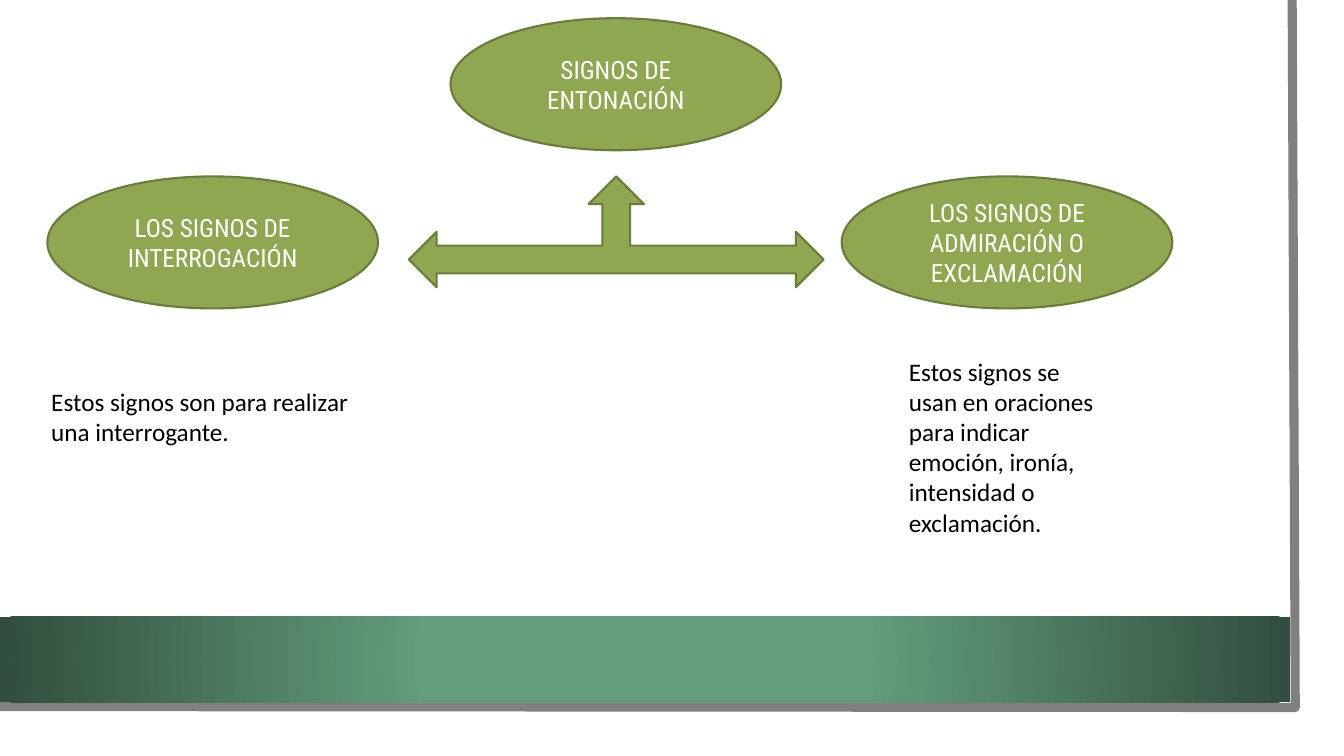
import pptx
import pptx.dml.color
import pptx.enum.shapes
import pptx.enum.text
import pptx.oxml
import pptx.oxml.ns
import pptx.util
from pptx.util import Pt

COLOURS = {
    "paper": "FFFFFF",
    "edge": "808080",
    "band_centre": "629D7D",
    "band_rim": "314E3E",
    "olive": "8FA751",
    "olive_line": "6A7C3C",
    "light_text": "FFFFFF",
    "dark_text": "000000",
}
SHAPES = pptx.enum.shapes.MSO_SHAPE
OVAL_WIDTH, OVAL_HEIGHT = 236.2, 94.3
SIDE_TOP = 126


def colour(name):
    return pptx.dml.color.RGBColor.from_string(COLOURS[name])


def add_plain_shape(slide, kind, left, top, width, height, fill=None, line=None):
    shape = slide.shapes.add_shape(kind, Pt(left), Pt(top), Pt(width), Pt(height))
    shape.shadow.inherit = False
    if fill:
        shape.fill.solid()
        shape.fill.fore_color.rgb = colour(fill)
    if line:
        shape.line.color.rgb = colour(line)
        shape.line.width = Pt(1.5)
    else:
        shape.line.fill.background()
    return shape


def add_page_edge(slide, points):
    start, *others = [(Pt(x), Pt(y)) for x, y in points]
    builder = slide.shapes.build_freeform(*start, scale=1.0)
    builder.add_line_segments(others, close=False)
    edge = builder.convert_to_shape()
    edge.shadow.inherit = False
    edge.fill.background()
    edge.line.color.rgb = colour("edge")
    edge.line.width = Pt(6.5)


def add_band(slide, left, top, width, height):
    band = add_plain_shape(slide, SHAPES.RECTANGLE, left, top, width, height)
    band.fill.gradient()
    stops = zip(band.fill.gradient_stops, (0.34, 1), ("band_centre", "band_rim"))
    for stop, position, name in stops:
        stop.position = position
        stop.color.rgb = colour(name)
    gradient = band.element.spPr.find(pptx.oxml.ns.qn("a:gradFill"))
    linear = gradient.find(pptx.oxml.ns.qn("a:lin"))
    radial = pptx.oxml.parse_xml(
        f'<a:path {pptx.oxml.ns.nsdecls("a")} path="circle">'
        '<a:fillToRect l="50000" t="50000" r="50000" b="50000"/></a:path>'
    )
    gradient.replace(linear, radial)


def write_text(shape, text, font, text_colour, alignment):
    shape.text_frame.word_wrap = True
    paragraph = shape.text_frame.paragraphs[0]
    paragraph.alignment = alignment
    run = paragraph.add_run()
    run.text = text
    run.font.name = font
    run.font.size = Pt(18)
    run.font.color.rgb = colour(text_colour)


def add_oval(slide, left, top, text):
    oval = add_plain_shape(
        slide, SHAPES.OVAL, left, top, OVAL_WIDTH, OVAL_HEIGHT, "olive", "olive_line"
    )
    oval.text_frame.vertical_anchor = pptx.enum.text.MSO_ANCHOR.MIDDLE
    write_text(oval, text, "Roboto Condensed", "light_text",
               pptx.enum.text.PP_ALIGN.CENTER)


def add_description(slide, left, top, width, height, text):
    box = slide.shapes.add_textbox(Pt(left), Pt(top), Pt(width), Pt(height))
    write_text(box, text, "Calibri", "dark_text", pptx.enum.text.PP_ALIGN.LEFT)
    box.text_frame.auto_size = pptx.enum.text.MSO_AUTO_SIZE.SHAPE_TO_FIT_TEXT


def main():
    presentation = pptx.Presentation()
    presentation.slide_width = Pt(960)
    presentation.slide_height = Pt(540)
    slide = presentation.slides.add_slide(presentation.slide_layouts[6])

    add_plain_shape(slide, SHAPES.RECTANGLE, 0, 0, 943, 523.5, "paper")
    add_page_edge(slide, [(923, 0), (925.2, 505.4), (-2.2, 504.7)])
    add_band(slide, 0, 440.6, 921.6, 61.2)

    add_oval(slide, 321.8, 13, "SIGNOS DE ENTONACIÓN")
    add_oval(slide, 601.2, SIDE_TOP, "LOS SIGNOS DE ADMIRACIÓN O EXCLAMACIÓN")
    add_oval(slide, 33.8, SIDE_TOP, "LOS SIGNOS DE INTERROGACIÓN")

    add_description(slide, 29.5, 272.2, 245.5, 51.1,
                    "Estos signos son para realizar una interrogante.")
    add_description(slide, 642.2, 250.6, 154.1, 138.2,
                    "Estos signos se usan en oraciones para indicar emoción, "
                    "ironía, intensidad o exclamación.")

    add_plain_shape(slide, SHAPES.LEFT_RIGHT_UP_ARROW, 292.1, SIDE_TOP, 296.2, 79.2,
                    "olive", "olive_line")

    presentation.save("out.pptx")


if __name__ == "__main__":
    main()
